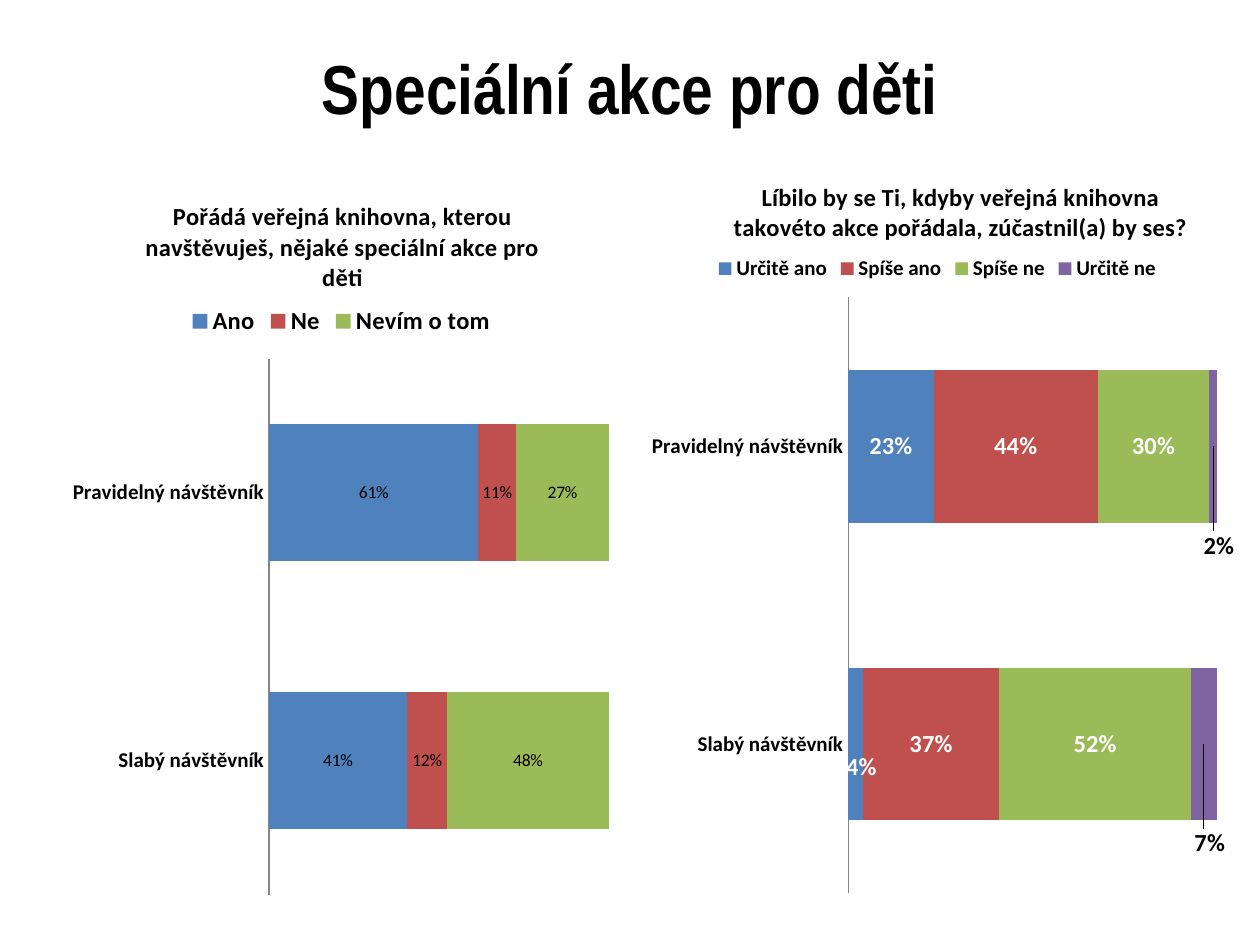
from lxml import etree
from pptx import Presentation
from pptx.chart.data import CategoryChartData
from pptx.dml.color import RGBColor
from pptx.enum.chart import XL_CHART_TYPE, XL_LEGEND_POSITION, XL_TICK_MARK
from pptx.enum.text import MSO_ANCHOR, PP_ALIGN
from pptx.oxml.ns import qn
from pptx.util import Inches, Pt

STACKED_BARS = XL_CHART_TYPE.BAR_STACKED_100
LEGEND_TOP = XL_LEGEND_POSITION.TOP
NO_TICKS = XL_TICK_MARK.NONE
WIDTH, HEIGHT = Inches(10), Inches(7.5)
BLACK, WHITE, AXIS_GRAY = "000000", "FFFFFF", "868686"
SERIES_COLORS = ["4F81BD", "C0504D", "9BBB59", "8064A2"]

TITLE = "Speciální akce pro děti"
VISITORS = ["Pravidelný návštěvník", "Slabý návštěvník"]

# box: inches; plot and title_at: shares of the chart
# moved_labels: (series, point) -> shift as shares of the chart
CHARTS = [
    {
        "title": "Líbilo by se Ti, kdyby veřejná knihovna takovéto akce pořádala, zúčastnil(a) by ses?",
        "box": (5.08, 1.15, 4.72, 6.06),
        "plot": (0.35, 0.2, 0.62, 0.78),
        "title_at": (0.15, 0.04),
        "legend_size": 12,
        "label_size": 14, "label_bold": True,
        "label_colors": [WHITE, WHITE, WHITE, BLACK],
        "series": [("Určitě ano", (0.23, 0.04)), ("Spíše ano", (0.44, 0.37)),
                   ("Spíše ne", (0.30, 0.52)), ("Určitě ne", (0.02, 0.07))],
        "moved_labels": {(0, 1): (0.01, 0.03), (3, 0): (0.01, 0.13), (3, 1): (0.01, 0.13)},
    },
    {
        "title": "Pořádá veřejná knihovna, kterou navštěvuješ, nějaké speciální akce pro děti",
        "box": (0.5, 1.31, 4.42, 5.91),
        "plot": (0.37, 0.26, 0.61, 0.72),
        "title_at": (0.14, 0.04),
        "legend_size": 14,
        "label_size": 10, "label_bold": False,
        "label_colors": [BLACK] * 3,
        "series": [("Ano", (0.61, 0.41)), ("Ne", (0.11, 0.12)), ("Nevím o tom", (0.27, 0.48))],
        "moved_labels": {},
    },
]


def rgb(color):
    return RGBColor.from_string(color)


def set_font(font, size, bold, color=BLACK, name="Calibri"):
    font.name, font.size, font.bold = name, Pt(size), bold
    font.color.rgb = rgb(color)


def manual_layout(settings):
    layout = etree.Element(qn("c:layout"))
    manual = etree.SubElement(layout, qn("c:manualLayout"))
    for tag, value in settings.items():
        etree.SubElement(manual, qn(f"c:{tag}")).set("val", str(value))
    return layout


def set_layout(element, after, **settings):
    """Give a chart part a manual layout, placed behind its child `after` or first."""
    for old in element.findall(qn("c:layout")):
        element.remove(old)
    previous = element.find(qn(after)) if after else None
    position = 0 if previous is None else element.index(previous) + 1
    element.insert(position, manual_layout(settings))


def move_label(series, point, shift, size, bold, color):
    set_font(series.points[point].data_label.font, size, bold, color)
    label = series._element.xpath(f"c:dLbls/c:dLbl[c:idx/@val='{point}']")[0]
    set_layout(label, "c:idx", x=shift[0], y=shift[1])
    number_format = etree.Element(qn("c:numFmt"), formatCode="0%", sourceLinked="0")
    label.find(qn("c:layout")).addnext(number_format)


def format_axes(chart):
    categories, values = chart.category_axis, chart.value_axis
    categories.reverse_order = True
    categories.major_tick_mark = NO_TICKS
    categories.format.line.color.rgb = rgb(AXIS_GRAY)
    set_font(categories.tick_labels.font, 12, True)
    values.visible = False
    values.has_major_gridlines = False
    values.minimum_scale, values.maximum_scale = 0, 1


def format_series(chart, content):
    size, bold = content["label_size"], content["label_bold"]
    for index, series in enumerate(chart.plots[0].series):
        color = content["label_colors"][index]
        series.format.fill.solid()
        series.format.fill.fore_color.rgb = rgb(SERIES_COLORS[index])
        labels = series.data_labels
        labels.show_value = True
        labels.number_format, labels.number_format_is_linked = "0%", False
        set_font(labels.font, size, bold, color)
        for (owner, point), shift in content["moved_labels"].items():
            if owner == index:
                move_label(series, point, shift, size, bold, color)


def add_survey_chart(slide, content):
    data = CategoryChartData(number_format="0%")
    data.categories = VISITORS
    for name, values in content["series"]:
        data.add_series(name, values)
    box = [Inches(length) for length in content["box"]]
    chart = slide.shapes.add_chart(STACKED_BARS, *box, data).chart
    set_font(chart.font, 10, False)

    chart.has_title = True
    chart.chart_title.include_in_layout = False
    paragraph = chart.chart_title.text_frame.paragraphs[0]
    paragraph.text = content["title"]
    set_font(paragraph.font, 14, True)
    x, y = content["title_at"]
    set_layout(chart.chart_title._element, "c:tx", xMode="edge", yMode="edge", x=x, y=y)

    chart.has_legend = True
    chart.legend.position = LEGEND_TOP
    chart.legend.include_in_layout = False
    set_font(chart.legend.font, content["legend_size"], True)

    plot = chart.plots[0]
    plot.gap_width, plot.overlap = 95, 100
    plot.vary_by_categories = False
    x, y, w, h = content["plot"]
    set_layout(chart._chartSpace.chart.plotArea, None, layoutTarget="inner",
               xMode="edge", yMode="edge", x=x, y=y, w=w, h=h)
    format_axes(chart)
    format_series(chart, content)


def add_title(slide):
    title = slide.shapes.title
    title.left, title.top = int(WIDTH * 0.05), int(HEIGHT * 0.04)
    title.width, title.height = int(WIDTH * 0.9), Inches(0.77)
    title.text_frame.text = TITLE
    title.text_frame.vertical_anchor = MSO_ANCHOR.MIDDLE
    paragraph = title.text_frame.paragraphs[0]
    paragraph.alignment = PP_ALIGN.CENTER
    set_font(paragraph.font, 39.6, True, name="Arial Narrow")


def main():
    presentation = Presentation()
    presentation.slide_width, presentation.slide_height = WIDTH, HEIGHT
    slide = presentation.slides.add_slide(presentation.slide_layouts[5])
    add_title(slide)
    for content in CHARTS:
        add_survey_chart(slide, content)
    presentation.save("out.pptx")


if __name__ == "__main__":
    main()
